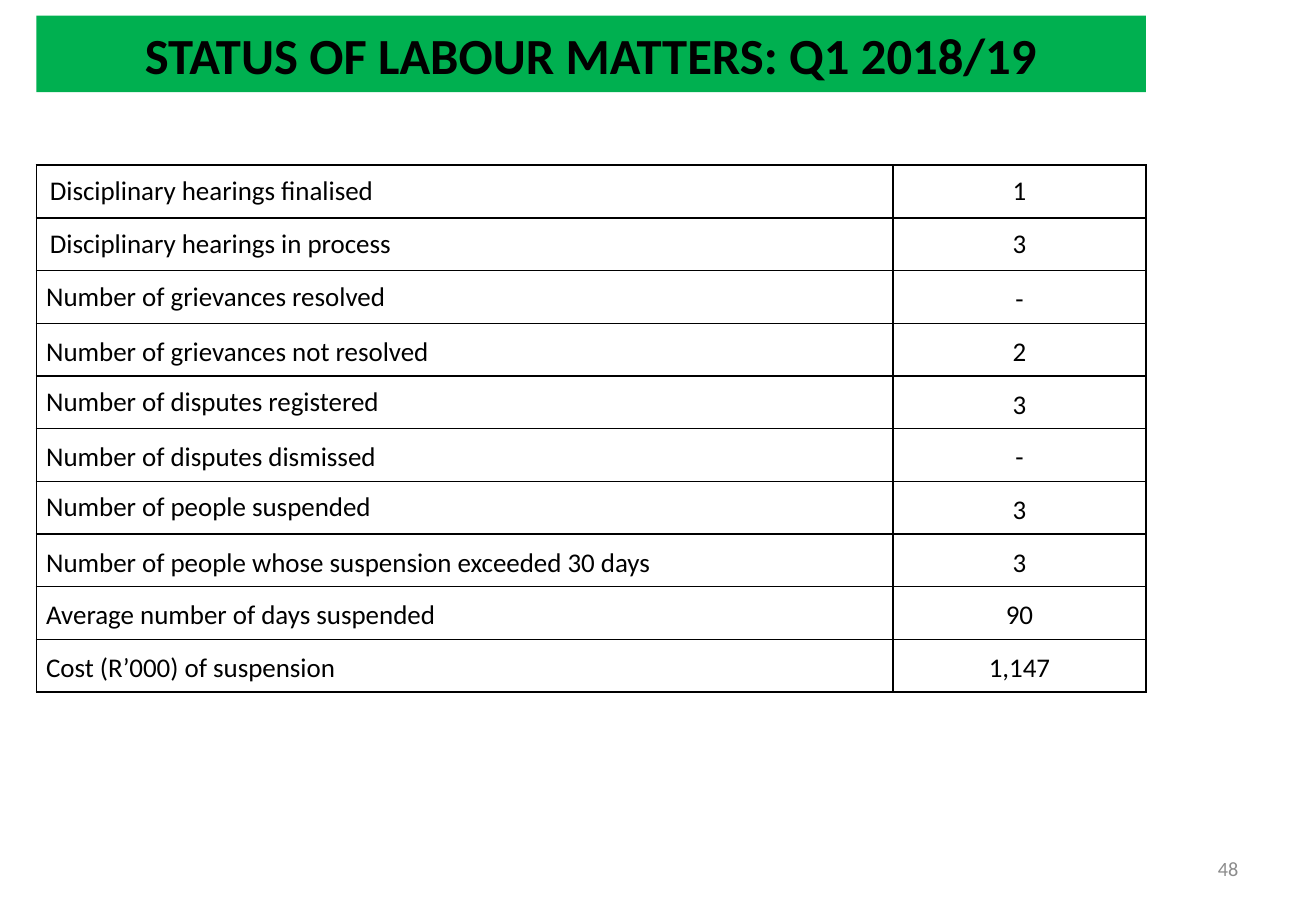
from lxml import etree
from pptx import Presentation, util as u
from pptx.dml.color import RGBColor
from pptx.enum import shapes, text
from pptx.oxml import ns

GREEN = RGBColor(0x00, 0xB0, 0x50)
BLACK = RGBColor(0x00, 0x00, 0x00)
GREY = RGBColor(0x8C, 0x8C, 0x8C)

LEFT, WIDTH = u.Inches(0.3), u.Inches(9.13)
COLUMNS = (u.Inches(7.05), u.Inches(2.08))
ROW_HEIGHT = u.Inches(0.434)

# Label, value, whether the label has space before it
MATTERS = [
    ("Disciplinary hearings finalised", "1", False),
    ("Disciplinary hearings in process", "3", False),
    ("Number of grievances resolved", "-", True),
    ("Number of grievances not resolved", "2", False),
    ("Number of disputes registered", "3", True),
    ("Number of disputes dismissed", "-", False),
    ("Number of people suspended", "3", True),
    ("Number of people whose suspension exceeded 30 days", "3", False),
    ("Average number of days suspended", "90", False),
    ("Cost (R’000) of suspension", "1,147", False),
]
HEARING_ROWS = 2


def write(frame, words, size, color, align, bold=False):
    frame.word_wrap = True
    paragraph = frame.paragraphs[0]
    paragraph.alignment = align
    run = paragraph.add_run()
    run.text = words
    run.font.name = "Calibri"
    run.font.size = u.Pt(size)
    run.font.bold = bold
    run.font.color.rgb = color
    return paragraph


def add_borders(cell):
    properties = cell._tc.get_or_add_tcPr()
    for position, side in enumerate(("lnL", "lnR", "lnT", "lnB")):
        line = etree.Element(ns.qn(f"a:{side}"), w=str(u.Pt(1)))
        fill = etree.SubElement(line, ns.qn("a:solidFill"))
        etree.SubElement(fill, ns.qn("a:srgbClr"), val=str(BLACK))
        properties.insert(position, line)


deck = Presentation()
deck.slide_width, deck.slide_height = u.Inches(10.83), u.Inches(7.5)
slide = deck.slides.add_slide(deck.slide_layouts[6])

# Title band
title = slide.shapes.add_shape(
    shapes.MSO_SHAPE.RECTANGLE, LEFT, u.Inches(0.13), WIDTH, u.Inches(0.63))
title.shadow.inherit = False
title.fill.solid()
title.fill.fore_color.rgb = GREEN
title.line.fill.background()
title.text_frame.vertical_anchor = text.MSO_ANCHOR.MIDDLE
write(title.text_frame, "STATUS OF LABOUR MATTERS: Q1 2018/19", 30, BLACK,
      text.PP_ALIGN.CENTER, bold=True)

# Page number
page_number = slide.shapes.add_textbox(
    u.Inches(7.76), u.Inches(6.95), u.Inches(2.53), u.Inches(0.4))
page_number.text_frame.vertical_anchor = text.MSO_ANCHOR.MIDDLE
write(page_number.text_frame, "48", 12, GREY, text.PP_ALIGN.RIGHT)

# Labour matters table
matters = slide.shapes.add_table(
    len(MATTERS), len(COLUMNS), LEFT, u.Inches(1.36), WIDTH,
    ROW_HEIGHT * len(MATTERS)).table
matters.first_row = matters.horz_banding = False
for column, width in zip(matters.columns, COLUMNS):
    column.width = width

for row, (label, value, spaced) in enumerate(MATTERS):
    matters.rows[row].height = ROW_HEIGHT
    hearing = row < HEARING_ROWS
    side_margin, end_margin = (0.11, 0.05) if hearing else (0.08, 0)
    for col, words in enumerate((label, value)):
        cell = matters.cell(row, col)
        cell.fill.background()
        cell.vertical_anchor = text.MSO_ANCHOR.MIDDLE
        cell.margin_left = cell.margin_right = u.Inches(side_margin)
        cell.margin_top = cell.margin_bottom = u.Inches(end_margin)
        align = text.PP_ALIGN.CENTER if col else text.PP_ALIGN.LEFT
        paragraph = write(cell.text_frame, words, 16, BLACK, align)
        if spaced and col == 0:
            paragraph.space_before = u.Pt(12)
        elif not hearing:
            paragraph.line_spacing = 1.15
        add_borders(cell)

deck.save("out.pptx")
